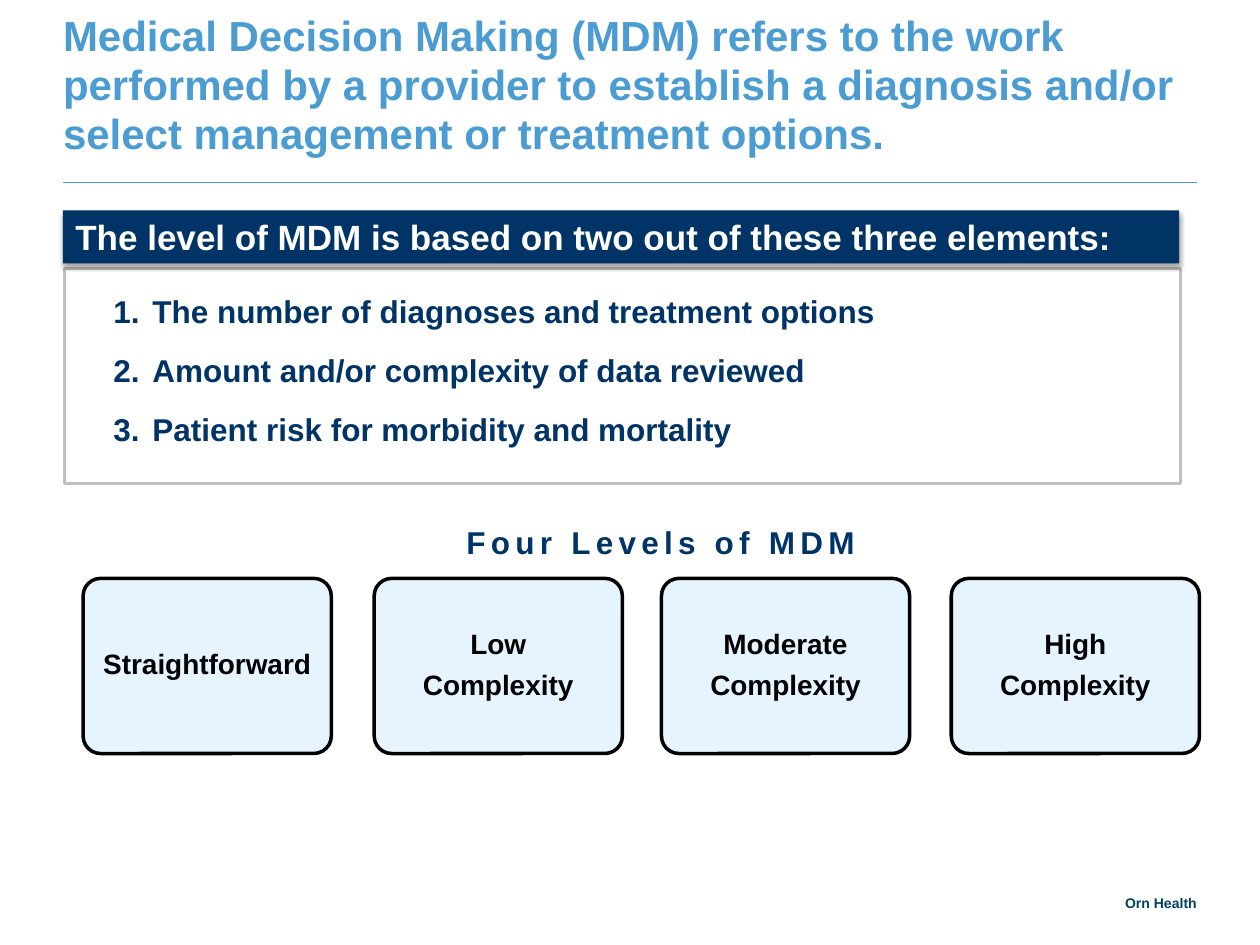
import pptx
import pptx.util
import pptx.dml.color
import pptx.enum.shapes
import pptx.enum.text
import pptx.oxml
import pptx.oxml.ns
from lxml import etree

Inches = pptx.util.Inches
Pt = pptx.util.Pt
Align = pptx.enum.text.PP_ALIGN
Anchor = pptx.enum.text.MSO_ANCHOR
Shape = pptx.enum.shapes.MSO_SHAPE
qn = pptx.oxml.ns.qn

COLORS = {
    "sky": "4B9CD3",
    "navy": "003366",
    "footer": "004163",
    "pale": "E5F4FF",
    "gray": "BFBFBF",
    "black": "000000",
    "white": "FFFFFF",
}
ELEMENTS = [
    "The number of diagnoses and treatment options",
    "Amount and/or complexity of data reviewed",
    "Patient risk for morbidity and mortality",
]
LEVELS = [
    (0.66, ["Straightforward"]),
    (2.97, ["Low", "Complexity"]),
    (5.25, ["Moderate", "Complexity"]),
    (7.55, ["High", "Complexity"]),
]


def rgb(name):
    """Return the named colour."""
    return pptx.dml.color.RGBColor.from_string(COLORS[name])


def write(holder, lines, size, color, align=Align.LEFT, anchor=Anchor.TOP,
          insets=(0, 0, 0, 0), wrap=True):
    """Write bold Arial paragraphs and return them."""
    frame = holder.text_frame
    frame.text = "\n".join(lines)
    frame.word_wrap = wrap
    frame.auto_size = pptx.enum.text.MSO_AUTO_SIZE.NONE
    frame.vertical_anchor = anchor
    (frame.margin_left, frame.margin_top,
     frame.margin_right, frame.margin_bottom) = map(Inches, insets)
    for paragraph in frame.paragraphs:
        paragraph.alignment = align
        for run in paragraph.runs:
            run.font.name = "Arial"
            run.font.size = Pt(size)
            run.font.bold = True
            run.font.color.rgb = rgb(color)
    return frame.paragraphs


def add_text(slide, box, lines, size, color, **layout):
    """Add a text box and return its paragraphs."""
    holder = slide.shapes.add_textbox(*map(Inches, box))
    return write(holder, lines, size, color, **layout)


def add_panel(slide, kind, box, fill=None, line=None, width=0):
    """Add a flat preset shape."""
    panel = slide.shapes.add_shape(kind, *map(Inches, box))
    panel.shadow.inherit = False
    if fill:
        panel.fill.solid()
        panel.fill.fore_color.rgb = rgb(fill)
    else:
        panel.fill.background()
    if line:
        panel.line.color.rgb = rgb(line)
        panel.line.width = Pt(width)
    else:
        panel.line.fill.background()
    return panel


def add_title(slide):
    """Place and format the slide title."""
    title = slide.shapes.title
    title.left, title.top, title.width, title.height = map(
        Inches, (0.5, 0.38, 10.92, 0.79))
    statement = ("Medical Decision Making (MDM) refers to the work performed by a "
                 "provider to establish a diagnosis and/or select management or "
                 "treatment options.")
    paragraphs = write(title, [statement], 24, "sky", anchor=Anchor.BOTTOM,
                       insets=(0, 0.95, 1.5, 0))
    paragraphs[0].line_spacing = Pt(28)


def add_rule(slide):
    """Add the thin rule under the title."""
    rule = slide.shapes.add_connector(
        pptx.enum.shapes.MSO_CONNECTOR.STRAIGHT,
        *map(Inches, (0.5, 1.45, 9.5, 1.45)))
    rule.line.color.rgb = rgb("sky")
    rule.line.width = Pt(0.5)
    etree.SubElement(rule._element.spPr, qn("a:effectLst"))


def add_banner(slide):
    """Add the shadowed heading bar of the elements list."""
    banner = add_panel(slide, Shape.RECTANGLE, (0.5, 1.67, 8.86, 0.42), "navy")
    effects = banner._element.spPr.find(qn("a:effectLst"))
    shadow = etree.SubElement(
        effects, qn("a:outerShdw"), blurRad=str(Pt(3.1)), dist=str(Pt(1.8)),
        dir="5400000", rotWithShape="0")
    shade = etree.SubElement(shadow, qn("a:srgbClr"), val=COLORS["black"])
    etree.SubElement(shade, qn("a:alpha"), val="35000")
    write(banner, ["The level of MDM is based on two out of these three elements:"],
          20, "white", anchor=Anchor.MIDDLE, insets=(0.1, 0.1, 0.1, 0.1), wrap=False)


def add_elements(slide):
    """Add the numbered list of elements."""
    paragraphs = add_text(slide, (0.51, 2.24, 9.5, 2.17), ELEMENTS, 18, "navy",
                          insets=(0, 0.08, 0, 0))
    for paragraph in paragraphs:
        paragraph.space_after = Pt(12)
        properties = paragraph._p.get_or_add_pPr()
        properties.set("marL", str(Inches(0.7)))
        properties.set("indent", str(Inches(-0.31)))
        bullet_color = etree.SubElement(properties, qn("a:buClr"))
        etree.SubElement(bullet_color, qn("a:srgbClr"), val=COLORS["navy"])
        etree.SubElement(properties, qn("a:buFont"), typeface="+mj-lt")
        etree.SubElement(properties, qn("a:buAutoNum"), type="arabicPeriod")


def add_level(slide, left, lines):
    """Add one rounded card for a level of decision making."""
    card = add_panel(slide, Shape.ROUNDED_RECTANGLE, (left, 4.59, 1.97, 1.39),
                     "pale", "black", 2)
    card.adjustments[0] = 0.1
    paragraphs = write(card, lines, 16, "black", align=Align.CENTER,
                       anchor=Anchor.MIDDLE, insets=(0.07, 0.07, 0.07, 0.07))
    for paragraph in paragraphs:
        paragraph.line_spacing = 0.9
        paragraph.space_after = Pt(6.4)


def main():
    """Build and save the slide."""
    deck = pptx.Presentation()
    deck.slide_width, deck.slide_height = Inches(10), Inches(7.5)
    slide = deck.slides.add_slide(deck.slide_layouts[5])
    add_text(slide, (8.27, 7, 1.23, 0.23), ["Orn Health"], 8, "footer",
             align=Align.RIGHT, anchor=Anchor.BOTTOM)
    add_rule(slide)
    add_title(slide)
    for left, lines in LEVELS:
        add_level(slide, left, lines)
    add_panel(slide, Shape.RECTANGLE, (0.51, 2.13, 8.86, 1.71), line="gray", width=1.5)
    add_banner(slide)
    heading = add_text(slide, (2.81, 4.1, 4.87, 0.4), ["Four Levels of MDM"], 18,
                       "navy", align=Align.CENTER, insets=(0.1, 0.05, 0.1, 0.05))
    heading[0].runs[0]._r.get_or_add_rPr().set("spc", "300")
    add_elements(slide)
    deck.save("out.pptx")


if __name__ == "__main__":
    main()
